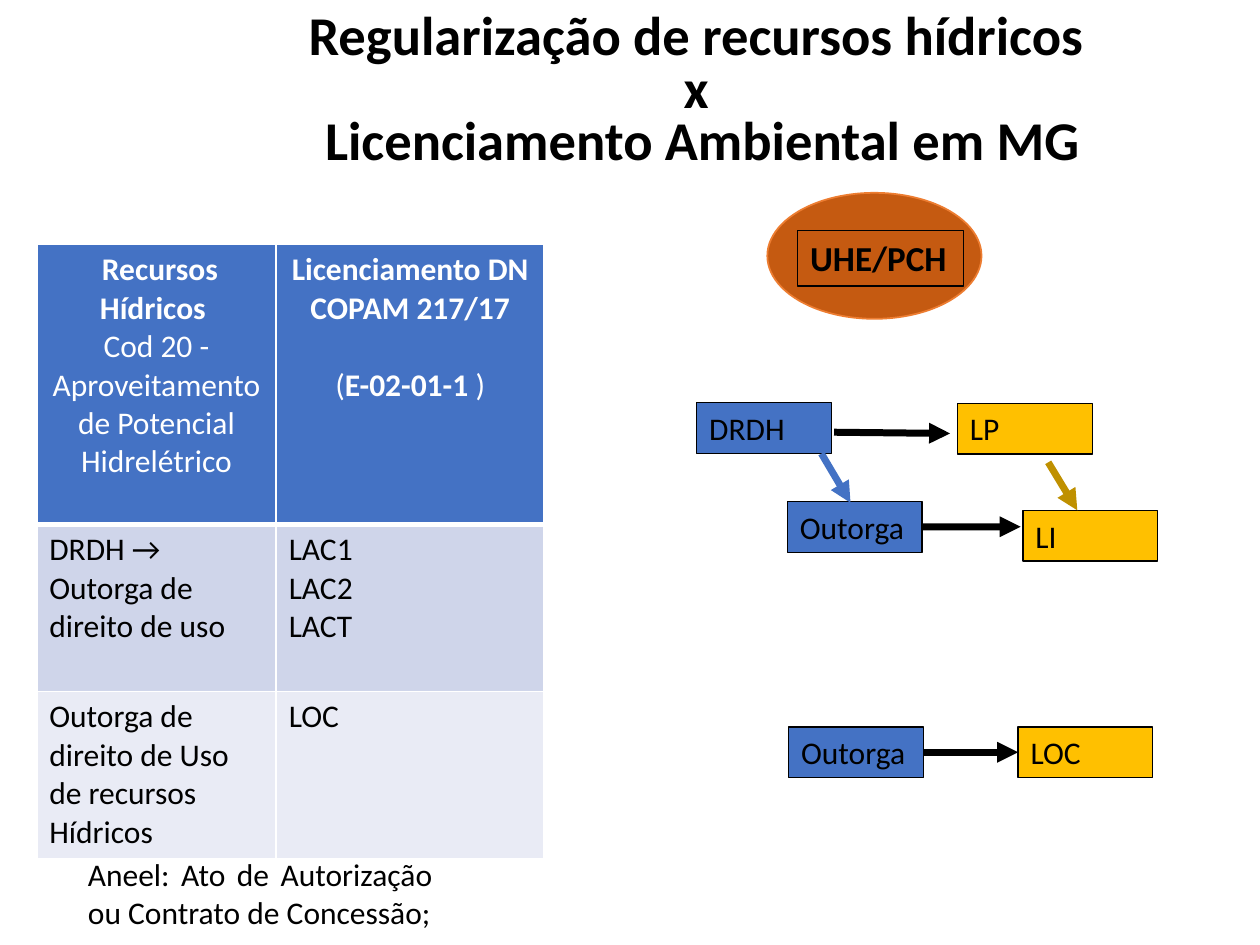
from dataclasses import dataclass

from lxml.etree import SubElement
from pptx import Presentation
from pptx.dml.color import RGBColor
from pptx.enum.shapes import MSO_CONNECTOR, MSO_SHAPE
from pptx.enum.text import MSO_ANCHOR, MSO_AUTO_SIZE, PP_ALIGN
from pptx.oxml.ns import qn
from pptx.slide import Slide
from pptx.util import Pt

BLACK = RGBColor(0x00, 0x00, 0x00)
WHITE = RGBColor(0xFF, 0xFF, 0xFF)
BLUE = RGBColor(0x44, 0x72, 0xC4)
PALE_BLUE = RGBColor(0xCF, 0xD5, 0xEA)
PALEST_BLUE = RGBColor(0xE9, 0xEB, 0xF5)
YELLOW = RGBColor(0xFF, 0xC0, 0x00)
GOLD = RGBColor(0xBF, 0x90, 0x00)
RUST = RGBColor(0xC5, 0x5A, 0x11)
ORANGE = RGBColor(0xED, 0x7D, 0x31)

LEFT, RIGHT = 1, 3
TITLE = ["Regularização de recursos hídricos ", "x ", "Licenciamento Ambiental em MG"]


def add_text(para, text, font="Calibri", size=18, bold=False, color=BLACK):
    span = para.add_run()
    span.text = text
    span.font.name = font
    span.font.size = Pt(size)
    span.font.bold = bold
    span.font.color.rgb = color


def add_paragraphs(frame, lines, align=PP_ALIGN.LEFT, spacing=None, **style):
    paras = []
    for index, line in enumerate(lines):
        para = frame.add_paragraph() if index else frame.paragraphs[0]
        para.alignment = align
        para.space_before = Pt(0)
        if spacing:
            para.line_spacing = spacing
        spans = [(line, style.get("bold", False))] if isinstance(line, str) else line
        for text, bold in spans:
            add_text(para, text, **{**style, "bold": bold})
        paras.append(para)
    return paras


def set_borders(cell, color, **widths):
    properties = cell._tc.get_or_add_tcPr()
    for index, side in enumerate("LRTB"):
        border = SubElement(properties, qn(f"a:ln{side}"), w=str(Pt(widths.get(side, 1))))
        solid = SubElement(border, qn("a:solidFill"))
        SubElement(solid, qn("a:srgbClr"), val=str(color))
        properties.insert(index, border)


@dataclass
class Page:
    slide: Slide
    box_width: float = 77
    box_height: float = 29
    arrow_width: float = 4

    def title(self, lines, left, top, width, height):
        box = self.slide.shapes.title
        box.left, box.top, box.width, box.height = map(Pt, (left, top, width, height))
        frame = box.text_frame
        frame.auto_size = MSO_AUTO_SIZE.NONE
        frame.vertical_anchor = MSO_ANCHOR.TOP
        add_paragraphs(frame, lines, PP_ALIGN.CENTER, 0.8, size=31.2, bold=True)

    def table(self, left, top, columns, heights):
        frame = self.slide.shapes.add_table(
            len(heights), len(columns), Pt(left), Pt(top), Pt(sum(columns)), Pt(sum(heights)))
        table = frame.table
        for column, width in zip(table.columns, columns):
            column.width = Pt(width)
        for row, height in zip(table.rows, heights):
            row.height = Pt(height)
        return table

    def cell(self, cell, lines, fill, borders, **style):
        cell.fill.solid()
        cell.fill.fore_color.rgb = fill
        set_borders(cell, WHITE, **borders)
        return add_paragraphs(cell.text_frame, lines, **style)

    def shape(self, kind, left, top, width, height, fill, line, line_width):
        shape = self.slide.shapes.add_shape(kind, Pt(left), Pt(top), Pt(width), Pt(height))
        shape.shadow.inherit = False
        shape.fill.solid()
        shape.fill.fore_color.rgb = fill
        shape.line.color.rgb = line
        shape.line.width = Pt(line_width)
        return shape

    def box(self, text, left, top, fill, width=None, height=None, **style):
        box = self.shape(MSO_SHAPE.RECTANGLE, left, top, width or self.box_width,
                         height or self.box_height, fill, BLACK, 0.75)
        box.text_frame.word_wrap = True
        box.text_frame.vertical_anchor = MSO_ANCHOR.TOP
        add_paragraphs(box.text_frame, [text], **style)
        return box

    def note(self, text, left, top, width, height):
        box = self.slide.shapes.add_textbox(Pt(left), Pt(top), Pt(width), Pt(height))
        box.text_frame.word_wrap = True
        add_paragraphs(box.text_frame, [text], PP_ALIGN.JUSTIFY)

    def arrow(self, start, end, color=BLACK, source=None, target=None):
        arrow = self.slide.shapes.add_connector(
            MSO_CONNECTOR.STRAIGHT, *map(Pt, (*start, *end)))
        if source:
            arrow.begin_connect(source, RIGHT)
        if target:
            arrow.end_connect(target, LEFT)
        arrow.line.color.rgb = color
        arrow.line.width = Pt(self.arrow_width)
        SubElement(arrow.line._get_or_add_ln(), qn("a:tailEnd"), type="triangle")
        SubElement(arrow._element.spPr, qn("a:effectLst"))


def fill_table(page):
    table = page.table(21, 139.7, (136.8, 153.2), (160, 95.5, 95.5))
    header = [
        [[(" Recursos Hídricos ", True)],
         "Cod 20 - Aproveitamento de Potencial Hidrelétrico"],
        [[("Licenciamento DN COPAM 217/17", True)],
         [("(", False), ("E-02-01-1 ", True), (")", False)]],
    ]
    for column, lines in enumerate(header):
        paras = page.cell(table.cell(0, column), lines, BLUE, {"B": 3},
                          align=PP_ALIGN.CENTER, color=WHITE)
    paras[-1].space_before = Pt(22)

    body = [
        (PALE_BLUE, {"T": 3},
         [["DRDH → ", "Outorga de direito de uso"], ["LAC1", "LAC2", "LACT"]]),
        (PALEST_BLUE, {},
         [["Outorga de direito de Uso de recursos Hídricos"], ["LOC"]]),
    ]
    for row, (fill, borders, cells) in enumerate(body, start=1):
        for column, lines in enumerate(cells):
            page.cell(table.cell(row, column), lines, fill, borders)


def draw_flow(page):
    page.shape(MSO_SHAPE.OVAL, 438.5, 110.2, 122.4, 72, RUST, ORANGE, 1)
    page.box("UHE/PCH", 455.8, 131.8, RUST, 95, 31.7, size=20, bold=True)

    page.box("DRDH", 398.2, 230, BLUE)
    page.box("LP", 547.2, 230.4, YELLOW)
    grant = page.box("Outorga", 450, 286.6, BLUE)
    page.box("LI", 584.6, 291.6, YELLOW)
    final_grant = page.box("Outorga", 450.7, 415.4, BLUE)
    final_license = page.box("LOC", 581.8, 415.4, YELLOW)

    page.arrow((476.6, 247), (542.9, 247.7))
    page.arrow((527, 300.2), (583.2, 301), source=grant)
    page.arrow((527.7, 430), (581.8, 430), source=final_grant, target=final_license)
    page.arrow((469.4, 259.2), (486, 287.3), BLUE)
    page.arrow((599, 264.2), (615.6, 291.6), GOLD)


def main():
    deck = Presentation()
    deck.slide_width, deck.slide_height = Pt(720), Pt(540)
    page = Page(deck.slides.add_slide(deck.slide_layouts[5]))
    page.title(TITLE, 51.8, 4.3, 699, 104.4)
    fill_table(page)
    draw_flow(page)
    page.note("Aneel: Ato de Autorização ou Contrato de Concessão;", 43.2, 485.3, 211, 51)
    deck.save("out.pptx")


if __name__ == "__main__":
    main()
